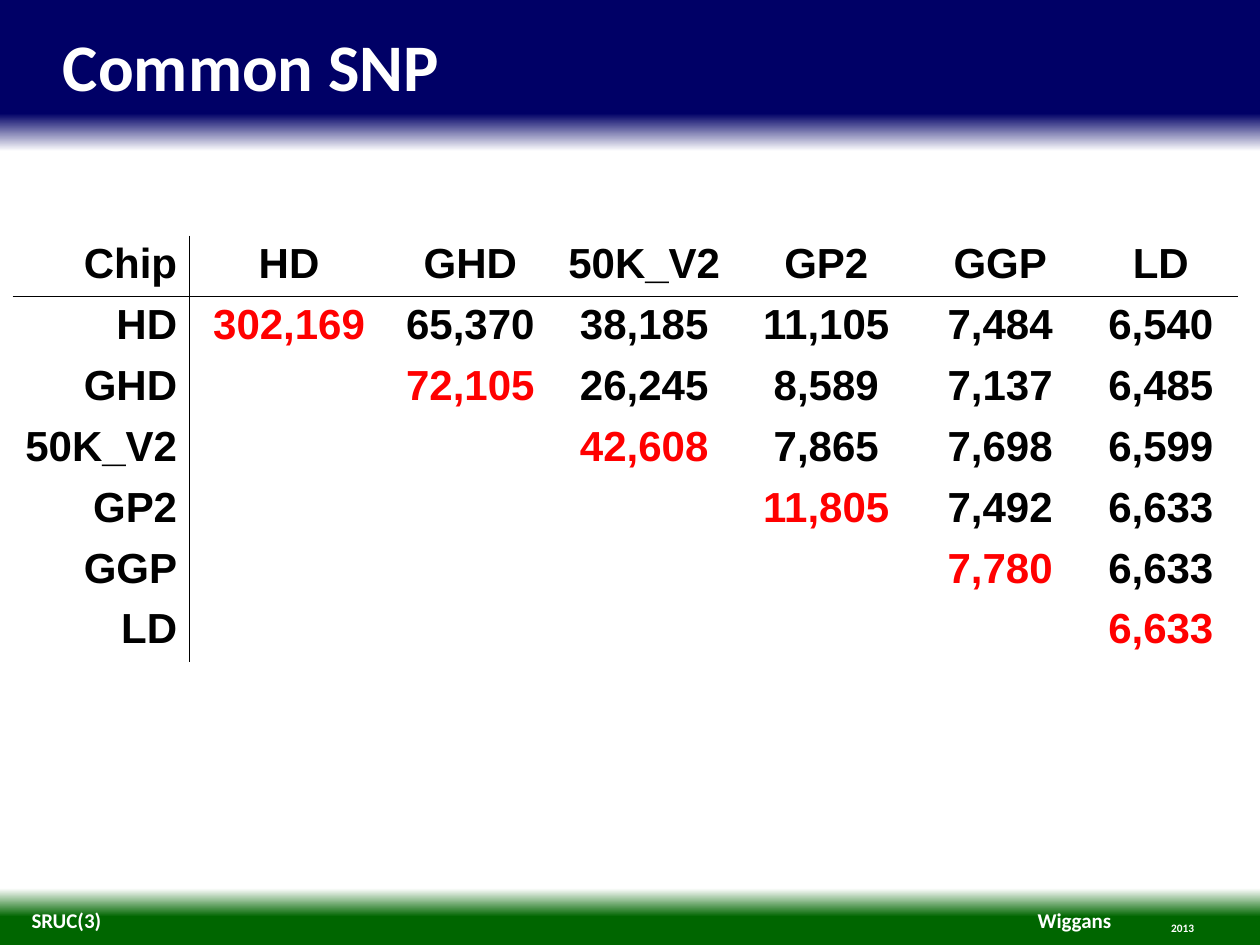
from dataclasses import dataclass

from lxml import etree
from pptx import Presentation
from pptx.dml.color import RGBColor
from pptx.enum.text import MSO_ANCHOR, PP_ALIGN
from pptx.oxml.ns import qn
from pptx.util import Pt

LEFT, CENTER, RIGHT = PP_ALIGN.LEFT, PP_ALIGN.CENTER, PP_ALIGN.RIGHT
TOP, MIDDLE = MSO_ANCHOR.TOP, MSO_ANCHOR.MIDDLE


@dataclass(frozen=True)
class Theme:
    navy: str = "000066"
    green: str = "006600"
    white: str = "FFFFFF"
    black: str = "000000"
    red: str = "FF0000"
    heading_font: str = "Calibri"
    table_font: str = "Arial"
    title_size: float = 38
    table_size: float = 24
    footer_size: float = 12
    year_size: float = 6.5


THEME = Theme()

CHIPS = ["HD", "GHD", "50K_V2", "GP2", "GGP", "LD"]
# Each row starts at the diagonal of the matrix
COMMON_SNP = [
    ["302,169", "65,370", "38,185", "11,105", "7,484", "6,540"],
    ["72,105", "26,245", "8,589", "7,137", "6,485"],
    ["42,608", "7,865", "7,698", "6,599"],
    ["11,805", "7,492", "6,633"],
    ["7,780", "6,633"],
    ["6,633"],
]
COLUMN_WIDTHS = [101.2, 113.6, 93.6, 105.1, 103, 95.8, 87.8]
ROW_HEIGHT = 33.95


def write_text(tf, text, *, size, font, color, align=LEFT):
    p = tf.paragraphs[0]
    p.alignment = align
    r = p.add_run()
    r.text = text
    r.font.name, r.font.size, r.font.bold = font, Pt(size), True
    r.font.color.rgb = RGBColor.from_string(color)


def add_label(s, text, left, top, width, height, *, size, align=LEFT,
              anchor=MIDDLE, wrap=True):
    tf = s.shapes.add_textbox(Pt(left), Pt(top), Pt(width), Pt(height)).text_frame
    tf.word_wrap = wrap
    tf.vertical_anchor = anchor
    tf.margin_left = tf.margin_right = tf.margin_top = tf.margin_bottom = 0
    write_text(tf, text, size=size, font=THEME.heading_font,
               color=THEME.white, align=align)


def set_background(s):
    """Fade from a navy band through white to a green band."""
    fill = s.background.fill
    fill.gradient()
    bg = s.background._cSld
    stops = next(bg.iter(qn("a:gsLst")))
    for stop in list(stops):
        stops.remove(stop)
    for percent, color in [(0, THEME.navy), (12, THEME.navy), (16, THEME.white),
                           (94, THEME.white), (97, THEME.green), (100, THEME.green)]:
        stop = etree.SubElement(stops, qn("a:gs"), pos=str(percent * 1000))
        etree.SubElement(stop, qn("a:srgbClr"), val=color)
    next(bg.iter(qn("a:lin"))).set("ang", "5400000")


def set_borders(cell, ruled):
    """Rule the sides named in ruled and leave the others without a line."""
    tc_pr = cell._tc.get_or_add_tcPr()
    for i, side in enumerate("LRTB"):
        ln = etree.Element(qn(f"a:ln{side}"), w=str(Pt(1)))
        if side in ruled:
            fill = etree.SubElement(ln, qn("a:solidFill"))
            etree.SubElement(fill, qn("a:srgbClr"), val=THEME.black)
        else:
            etree.SubElement(ln, qn("a:noFill"))
        tc_pr.insert(i, ln)


def add_matrix(s, left, top):
    rows = [["Chip"] + CHIPS]
    for i, (chip, values) in enumerate(zip(CHIPS, COMMON_SNP)):
        rows.append([chip] + [""] * i + values)
    table = s.shapes.add_table(
        len(rows), len(COLUMN_WIDTHS), Pt(left), Pt(top),
        Pt(sum(COLUMN_WIDTHS)), Pt(ROW_HEIGHT * len(rows))).table
    table.first_row = table.horz_banding = False
    for column, width in zip(table.columns, COLUMN_WIDTHS):
        column.width = Pt(width)
    for i, values in enumerate(rows):
        table.rows[i].height = Pt(ROW_HEIGHT)
        for j, value in enumerate(values):
            cell = table.cell(i, j)
            cell.margin_left = Pt(7.2 if j else 2)
            cell.margin_top = cell.margin_bottom = Pt(3)
            cell.fill.solid()
            cell.fill.fore_color.rgb = RGBColor.from_string(THEME.white)
            set_borders(cell, {0: "R", 1: "L"}.get(j, "") + {0: "B", 1: "T"}.get(i, ""))
            if value:
                write_text(cell.text_frame, value, size=THEME.table_size,
                           font=THEME.table_font,
                           color=THEME.red if i == j > 0 else THEME.black,
                           align=CENTER if j else RIGHT)


def main():
    prs = Presentation()
    prs.slide_width, prs.slide_height = Pt(720), Pt(540)
    s = prs.slides.add_slide(prs.slide_layouts[6])
    set_background(s)
    add_label(s, "Wiggans", 592.6, 518.4, 42.5, 14.4, size=THEME.footer_size,
              align=RIGHT, wrap=False)
    add_label(s, "SRUC(3)", 18, 518.4, 375.8, 14.4, size=THEME.footer_size)
    add_label(s, "2013", 653.8, 526.3, 43.9, 7.9, size=THEME.year_size, align=CENTER)
    add_label(s, "Common SNP", 36, 14.4, 648, 46, size=THEME.title_size, anchor=TOP)
    add_matrix(s, 7.2, 134.6)
    prs.save("out.pptx")


if __name__ == "__main__":
    main()
